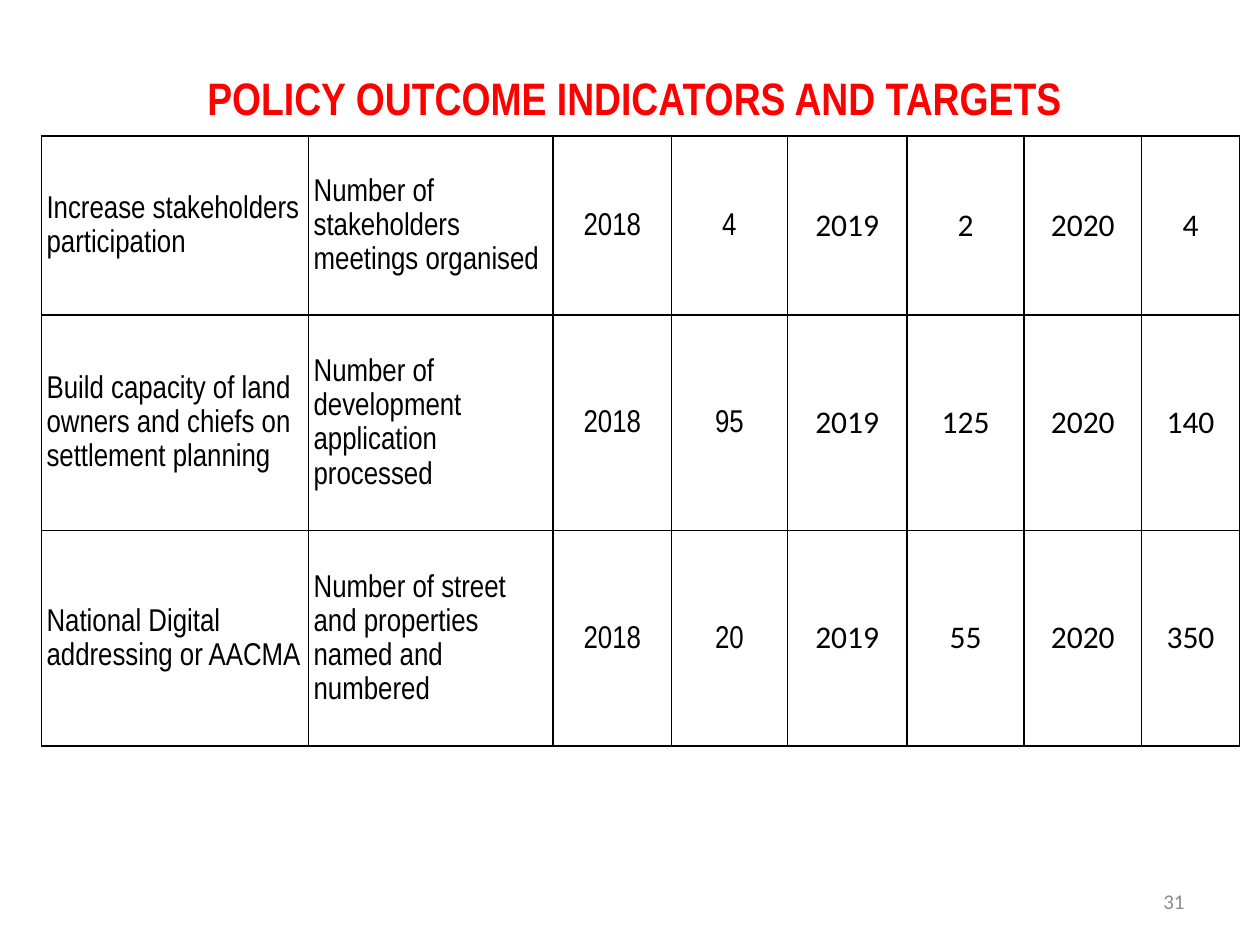
import pptx
import pptx.util
import pptx.dml.color
import pptx.enum.text
import pptx.oxml
import pptx.oxml.ns
from dataclasses import dataclass

Inches = pptx.util.Inches
Pt = pptx.util.Pt
Align = pptx.enum.text.PP_ALIGN
Middle = pptx.enum.text.MSO_ANCHOR.MIDDLE


@dataclass
class Theme:
    head_font: str = "Arial Narrow"
    body_font: str = "Calibri"
    head_size: float = 26
    cell_size: float = 18
    page_size: float = 12
    red: str = "FF0000"
    black: str = "000000"
    gray: str = "8C8C8C"
    line: float = 1


WIDTHS = [2.12, 1.94, 0.94, 0.92, 0.95, 0.93, 0.93, 0.78]
HEIGHTS = [1.42, 1.71, 1.71]
ROWS = [
    ["Increase stakeholders participation",
     "Number of stakeholders meetings organised",
     "2018", "4", "2019", "2", "2020", "4"],
    ["Build capacity of land owners and chiefs on settlement planning",
     "Number of development application processed",
     "2018", "95", "2019", "125", "2020", "140"],
    ["National Digital addressing or AACMA",
     "Number of street and properties named and numbered",
     "2018", "20", "2019", "55", "2020", "350"],
]
LABELS = 2   # left-aligned columns
NARROW = 4   # columns set in the narrow font


class Deck:
    def __init__(self, theme):
        self.theme = theme
        self.file = pptx.Presentation()
        self.file.slide_width = Inches(10)
        self.file.slide_height = Inches(7.5)
        self.slide = self.file.slides.add_slide(self.file.slide_layouts[5])

    def style(self, frame, font, size, color, align, bold=False):
        for para in frame.paragraphs:
            para.alignment = align
            for run in para.runs:
                run.font.name = font
                run.font.size = Pt(size)
                run.font.bold = bold
                run.font.color.rgb = pptx.dml.color.RGBColor.from_string(color)

    def title(self, text, left, top, width, height):
        shape = self.slide.shapes.title
        shape.left, shape.top = Inches(left), Inches(top)
        shape.width, shape.height = Inches(width), Inches(height)
        frame = shape.text_frame
        frame.text = text
        frame.vertical_anchor = Middle
        frame.auto_size = pptx.enum.text.MSO_AUTO_SIZE.NONE
        frame.margin_left = frame.margin_bottom = 0
        frame.margin_right, frame.margin_top = Inches(0.34), Inches(0.2)
        self.style(frame, self.theme.head_font, self.theme.head_size,
                   self.theme.red, Align.CENTER, True)

    def border(self, cell):
        """Draw a solid line on all four sides of the cell."""
        props = cell._tc.get_or_add_tcPr()
        for place, side in enumerate(("lnL", "lnR", "lnT", "lnB")):
            props.insert(place, pptx.oxml.parse_xml(
                f'<a:{side} {pptx.oxml.ns.nsdecls("a")} w="{Pt(self.theme.line)}">'
                f'<a:solidFill><a:srgbClr val="{self.theme.black}"/></a:solidFill>'
                f'</a:{side}>'))

    def cell(self, cell, text, col):
        narrow = col < NARROW
        cell.text = text
        cell.vertical_anchor = Middle
        cell.margin_left = cell.margin_right = Inches(0.04)
        cell.margin_top = cell.margin_bottom = 0
        cell.fill.background()
        self.border(cell)
        frame = cell.text_frame
        if narrow:
            frame.paragraphs[0].line_spacing = 1.15
        self.style(frame,
                   self.theme.head_font if narrow else self.theme.body_font,
                   self.theme.cell_size, self.theme.black,
                   Align.LEFT if col < LABELS else Align.CENTER)

    def table(self, rows, widths, heights, left, top):
        table = self.slide.shapes.add_table(
            len(rows), len(widths), Inches(left), Inches(top),
            Inches(sum(widths)), Inches(sum(heights))).table
        table.first_row = table.horz_banding = False
        for col, width in zip(table.columns, widths):
            col.width = Inches(width)
        for row, height, texts in zip(table.rows, heights, rows):
            row.height = Inches(height)
            for col, text in enumerate(texts):
                self.cell(row.cells[col], text, col)

    def number(self, text, left, top, width, height):
        box = self.slide.shapes.add_textbox(
            Inches(left), Inches(top), Inches(width), Inches(height))
        frame = box.text_frame
        frame.word_wrap = True
        frame.text = text
        frame.vertical_anchor = Middle
        self.style(frame, self.theme.body_font, self.theme.page_size,
                   self.theme.gray, Align.RIGHT)


def main():
    deck = Deck(Theme())
    deck.title("POLICY OUTCOME INDICATORS AND TARGETS", 0.92, 0.42, 8.58, 0.5)
    deck.table(ROWS, WIDTHS, HEIGHTS, 0.33, 1.08)
    deck.number("31", 7.17, 6.95, 2.33, 0.4)
    deck.file.save("out.pptx")


if __name__ == "__main__":
    main()
